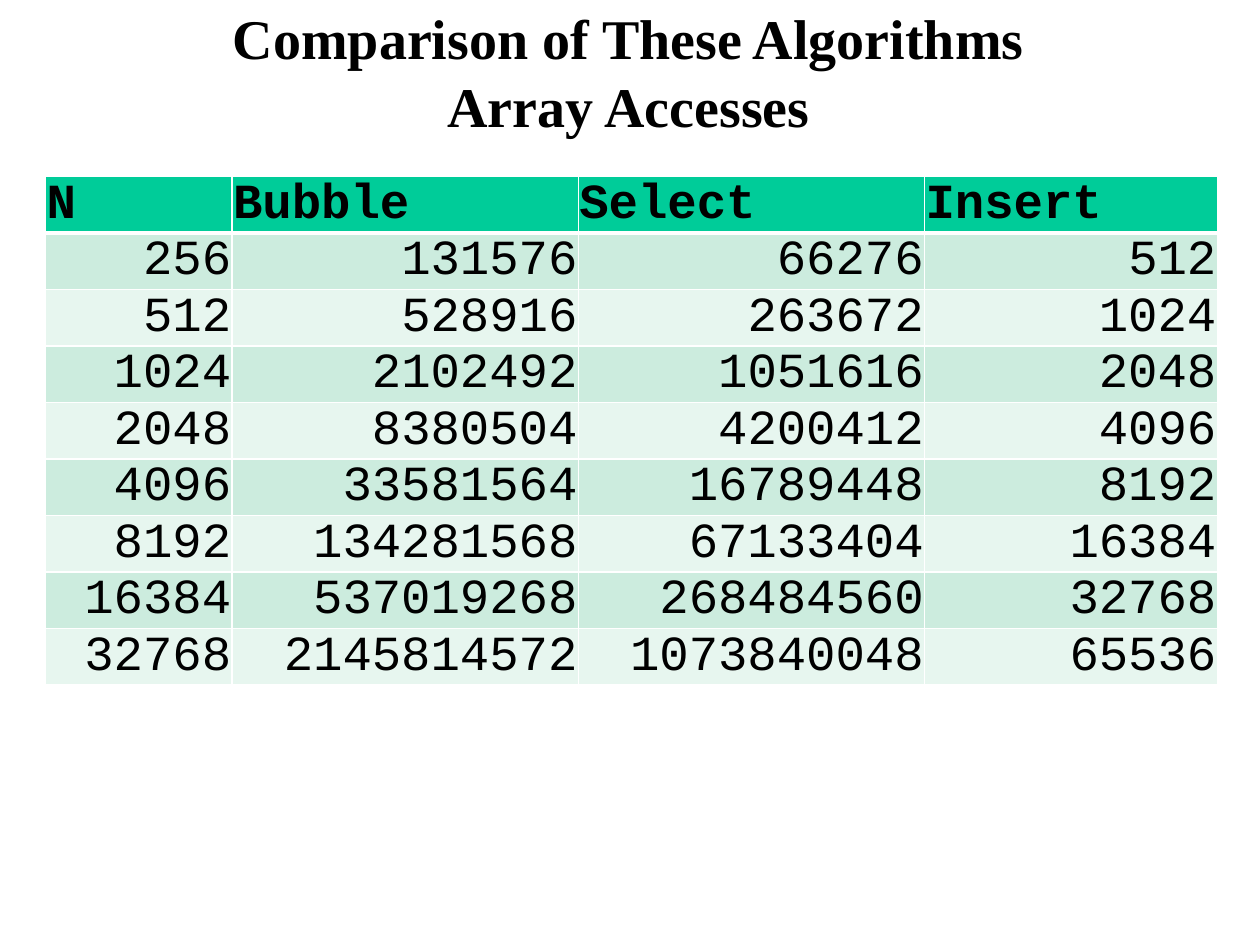
import dataclasses

import pptx
import pptx.dml.color
import pptx.enum.text
import pptx.oxml
import pptx.oxml.ns
import pptx.util

Cm = pptx.util.Cm
Pt = pptx.util.Pt
Align = pptx.enum.text.PP_ALIGN
Anchor = pptx.enum.text.MSO_ANCHOR


@dataclasses.dataclass(frozen=True)
class Theme:
    ink: str = "000000"
    head: str = "00CC99"
    bands: tuple = ("CCECDE", "E7F6EF")
    rule: str = "FFFFFF"
    serif: str = "Times New Roman"
    mono: str = "Courier New"
    title: int = 32
    cell: int = 28


THEME = Theme()

TITLE = ("Comparison of These Algorithms", "Array Accesses")
HEADS = ("N", "Bubble", "Select", "Insert")
COUNTS = (
    (256, 131576, 66276, 512),
    (512, 528916, 263672, 1024),
    (1024, 2102492, 1051616, 2048),
    (2048, 8380504, 4200412, 4096),
    (4096, 33581564, 16789448, 8192),
    (8192, 134281568, 67133404, 16384),
    (16384, 537019268, 268484560, 32768),
    (32768, 2145814572, 1073840048, 65536),
)
WIDTHS = (3.76, 6.98, 6.98, 5.9)
ROW = 1.04


def color(code):
    return pptx.dml.color.RGBColor.from_string(code)


def add_run(para, text, face, size, bold):
    run = para.add_run()
    run.text = text
    font = run.font
    font.name = face
    font.size = Pt(size)
    font.bold = bold
    font.color.rgb = color(THEME.ink)


def add_title(slide):
    shape = slide.shapes.title
    shape.left, shape.top = Cm(1.88), Cm(0.15)
    shape.width, shape.height = Cm(21.59), Cm(2.57)
    frame = shape.text_frame
    frame.auto_size = pptx.enum.text.MSO_AUTO_SIZE.NONE
    frame.vertical_anchor = Anchor.MIDDLE
    para = frame.paragraphs[0]
    para.alignment = Align.CENTER
    for i, line in enumerate(TITLE):
        if i:
            para.add_line_break()
        add_run(para, line, THEME.serif, THEME.title, True)


def add_rules(cell, top, base):
    # Side rules are 1 pt; the rule below the heads is heavier
    props = cell._tc.get_or_add_tcPr()
    space = pptx.oxml.ns.nsdecls("a")
    for side, width in (("L", 1), ("R", 1), ("T", top), ("B", base)):
        props.append(pptx.oxml.parse_xml(
            f'<a:ln{side} {space} w="{Pt(width)}"><a:solidFill>'
            f'<a:srgbClr val="{THEME.rule}"/></a:solidFill></a:ln{side}>'))


def fill_cell(cell, text, row):
    head = row == 0
    add_rules(cell, 3 if row == 1 else 1, 3 if head else 1)
    cell.fill.solid()
    tint = THEME.head if head else THEME.bands[(row - 1) % 2]
    cell.fill.fore_color.rgb = color(tint)
    cell.margin_left = cell.margin_right = cell.margin_top = Cm(0.02)
    cell.margin_bottom = 0
    cell.vertical_anchor = Anchor.BOTTOM
    para = cell.text_frame.paragraphs[0]
    para.alignment = Align.LEFT if head else Align.RIGHT
    add_run(para, text, THEME.mono, THEME.cell, head)


def add_grid(slide):
    rows = (HEADS, *COUNTS)
    grid = slide.shapes.add_table(
        len(rows), len(HEADS), Cm(0.92), Cm(3.56),
        Cm(sum(WIDTHS)), Cm(ROW * len(rows))).table
    for col, width in zip(grid.columns, WIDTHS):
        col.width = Cm(width)
    for r, values in enumerate(rows):
        grid.rows[r].height = Cm(ROW)
        for c, value in enumerate(values):
            fill_cell(grid.cell(r, c), str(value), r)


def main():
    deck = pptx.Presentation()
    deck.slide_width, deck.slide_height = Cm(25.4), Cm(19.05)
    # Title Only layout
    slide = deck.slides.add_slide(deck.slide_layouts[5])
    add_title(slide)
    add_grid(slide)
    deck.save("out.pptx")


if __name__ == "__main__":
    main()
